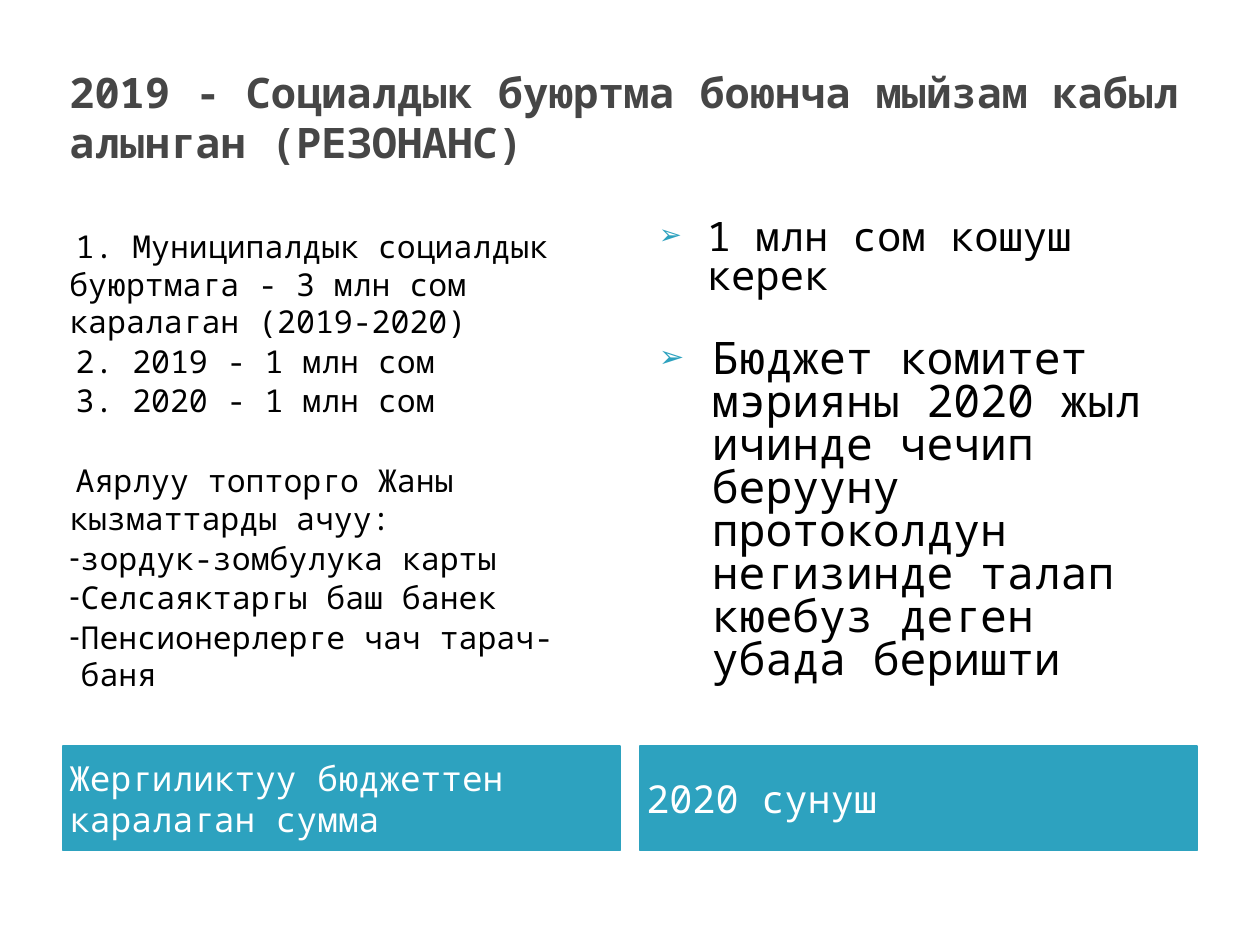
from lxml import etree
from pptx import Presentation
from pptx import util as u
from pptx.dml.color import RGBColor
from pptx.enum import text
from pptx.oxml.ns import qn

FONT = "Noto Sans Mono"
ACCENT = "2DA2BF"
COLUMN_WIDTH = 4.42
LEFT, RIGHT = 0.5, 5.08


def colour(value):
    return RGBColor.from_string(value)


def set_bullet(para, mark, shade=None, percent=None):
    """Give the paragraph a bullet character, or none when mark is empty."""
    props = para._p.get_or_add_pPr()
    if not mark:
        etree.SubElement(props, qn("a:buNone"))
        return
    if shade:
        holder = etree.SubElement(props, qn("a:buClr"))
        etree.SubElement(holder, qn("a:srgbClr"), val=shade)
    if percent:
        etree.SubElement(props, qn("a:buSzPct"), val=str(percent * 1000))
    etree.SubElement(props, qn("a:buChar"), char=mark)


def write(para, wording, size=18, shade="000000", bold=False, margin=0, indent=0,
          before=0, spacing=1, mark="", mark_shade=None, mark_percent=None):
    set_bullet(para, mark, mark_shade, mark_percent)
    props = para._p.get_or_add_pPr()
    props.set("marL", str(u.Inches(margin)))
    props.set("indent", str(u.Inches(indent)))
    para.alignment = text.PP_ALIGN.LEFT
    para.line_spacing = spacing
    para.space_before = u.Pt(before)
    para.space_after = u.Pt(0)
    span = para.add_run()
    span.text = wording
    span.font.name = FONT
    span.font.size = u.Pt(size)
    span.font.bold = bold
    span.font.color.rgb = colour(shade)


def place(shape, box, anchor):
    """Move a placeholder into its box and return its text frame."""
    shape.left, shape.top, shape.width, shape.height = map(u.Inches, box)
    frame = shape.text_frame
    frame.word_wrap = True
    frame.auto_size = text.MSO_AUTO_SIZE.NONE
    frame.vertical_anchor = anchor
    frame.margin_left = frame.margin_right = u.Inches(0.05)
    frame.margin_top = frame.margin_bottom = u.Inches(0.05)
    return frame


def add_title(shape, box, wording):
    frame = place(shape, box, text.MSO_ANCHOR.MIDDLE)
    write(frame.paragraphs[0], wording, size=24, shade="464646", bold=True)


def add_caption(shape, box, wording, size):
    frame = place(shape, box, text.MSO_ANCHOR.MIDDLE)
    shape.fill.solid()
    shape.fill.fore_color.rgb = colour(ACCENT)
    shape.line.color.rgb = colour(ACCENT)
    shape.line.width = u.Pt(0.75)
    write(frame.paragraphs[0], wording, size=size, shade="FFFFFF")


def add_list(shape, box, items):
    """Fill a column with (wording, format) pairs."""
    frame = place(shape, box, text.MSO_ANCHOR.TOP)
    for number, (wording, style) in enumerate(items):
        para = frame.add_paragraph() if number else frame.paragraphs[0]
        write(para, wording, **style)


def main():
    deck = Presentation()
    deck.slide_width, deck.slide_height = u.Inches(10), u.Inches(7.5)
    page = deck.slides.add_slide(deck.slide_layouts[4])
    title, left_caption, left_list, right_caption, right_list = page.placeholders

    add_title(title, (LEFT, 0.3, 9, 1.25),
              "2019 - Социалдык буюртма боюнча мыйзам кабыл алынган (РЕЗОНАНС)")
    add_caption(left_caption, (LEFT, 5.92, COLUMN_WIDTH, 0.83),
                "Жергиликтуу бюджеттен каралаган сумма", 19.7)
    add_caption(right_caption, (RIGHT, 5.92, COLUMN_WIDTH, 0.83), "2020 сунуш", 22)

    plain = dict(indent=0.05, before=1)
    dash = dict(margin=0.09, indent=-0.09, before=1, mark="-")
    add_list(left_list, (LEFT, 1.75, COLUMN_WIDTH, 4.14), [
        ("1. Муниципалдык социалдык буюртмага - 3 млн сом каралаган (2019-2020)",
         plain | dict(before=0)),
        ("2. 2019 - 1 млн сом", plain),
        ("3. 2020 - 1 млн сом", plain),
        ("Аярлуу топторго Жаны кызматтарды ачуу:", plain | dict(before=24)),
        ("зордук-зомбулука карты", dash),
        ("Селсаяктаргы баш банек", dash),
        ("Пенсионерлерге чач тарач- баня", dash),
    ])

    arrow = dict(spacing=0.8, mark="➢", mark_shade=ACCENT, mark_percent=68)
    add_list(right_list, (RIGHT, 1.7, COLUMN_WIDTH, 4.19), [
        ("1 млн сом кошуш керек", arrow | dict(size=23.2, margin=0.48, indent=-0.38)),
        ("Бюджет комитет мэрияны 2020 жыл ичинде чечип берууну протоколдун "
         "негизинде талап кюебуз деген убада беришти",
         arrow | dict(size=25.6, margin=0.52, indent=-0.42, before=24)),
    ])
    deck.save("out.pptx")


if __name__ == "__main__":
    main()
